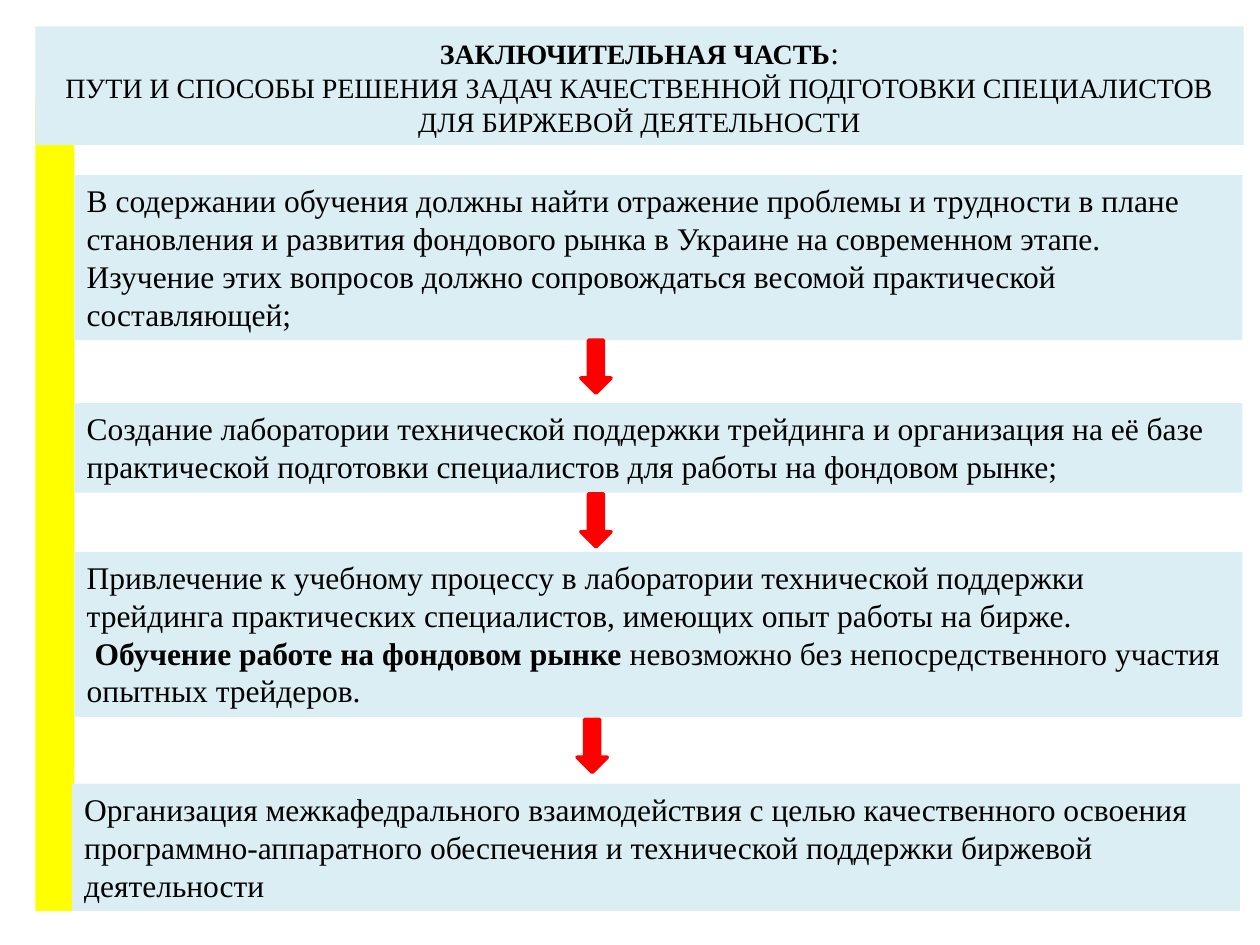
from dataclasses import dataclass

from pptx import Presentation, util as u
from pptx.dml.color import RGBColor
from pptx.enum import shapes, text

COLUMNS, ROWS = 100, 75


@dataclass(frozen=True)
class Theme:
    panel: str = "DBEEF4"
    bar: str = "FFFF00"
    arrow: str = "FF0000"
    ink: str = "000000"
    font: str = "Times New Roman"
    title_size: int = 16
    body_size: int = 18
    arrow_line: int = 2


@dataclass(frozen=True)
class Box:
    col: float
    row: float
    cols: float
    rows: float


@dataclass(frozen=True)
class Words:
    text: str
    bold: bool = False
    size: int = Theme.body_size
    new_line: bool = False


@dataclass(frozen=True)
class Step:
    row: float
    rows: float
    words: tuple[Words, ...]
    shift: float = 0
    arrow_row: float | None = None
    arrow_shift: float = 0


THEME = Theme()
PANEL_COL, PANEL_COLS = 5.9, 92.7
ARROW_COL, ARROW_COLS, ARROW_ROWS = 46.1, 2.4, 4.2
BAR = Box(2.8, 7.7, 3.1, 64.6)
HEADING = Box(2.8, 2.1, 95.9, 9.4)

TITLE = (
    (Words("ЗАКЛЮЧИТЕЛЬНАЯ ЧАСТЬ", True, THEME.title_size), Words(":")),
    (Words("ПУТИ И СПОСОБЫ РЕШЕНИЯ ЗАДАЧ КАЧЕСТВЕННОЙ ПОДГОТОВКИ "
           "СПЕЦИАЛИСТОВ ДЛЯ БИРЖЕВОЙ ДЕЯТЕЛЬНОСТИ", size=THEME.title_size),),
)

STEPS = (
    Step(13.9, 13.1, (
        Words("В содержании обучения должны найти отражение проблемы и трудности "
              "в плане становления и развития фондового рынка в Украине на "
              "современном этапе. Изучение этих вопросов должно сопровождаться "
              "весомой практической составляющей;"),), arrow_row=27),
    Step(32, 7.1, (
        Words("Создание лаборатории технической поддержки трейдинга и организация "
              "на её базе практической подготовки специалистов для работы на "
              "фондовом рынке;"),), arrow_row=39.2),
    Step(43.8, 13.1, (
        Words("Привлечение к учебному процессу в лаборатории технической поддержки "
              "трейдинга практических специалистов, имеющих опыт работы на бирже."),
        Words(" Обучение работе на фондовом рынке", True, new_line=True),
        Words(" невозможно без непосредственного участия опытных трейдеров.")),
        arrow_row=57.1, arrow_shift=-0.3),
    Step(62.2, 10.1, (
        Words("Организация межкафедрального взаимодействия с целью качественного "
              "освоения программно-аппаратного обеспечения и технической поддержки "
              "биржевой деятельности"),), shift=-0.2),
)


def place(prs, sp, box: Box) -> None:
    col, row = prs.slide_width / COLUMNS, prs.slide_height / ROWS
    frame = {"left": box.col * col, "top": box.row * row,
             "width": box.cols * col, "height": box.rows * row}
    for name, value in frame.items():
        setattr(sp, name, round(value))


def paint(sp, color: str) -> None:
    sp.fill.solid()
    sp.fill.fore_color.rgb = RGBColor.from_string(color)


def add_block(prs, s, kind, box: Box, color: str):
    sp = s.shapes.add_shape(kind, 0, 0, 0, 0)
    place(prs, sp, box)
    paint(sp, color)
    sp.shadow.inherit = False
    sp.line.fill.background()
    return sp


def write(sp, paragraphs: tuple[tuple[Words, ...], ...], align) -> None:
    tf = sp.text_frame
    frame = {"word_wrap": True, "vertical_anchor": text.MSO_ANCHOR.TOP,
             "auto_size": text.MSO_AUTO_SIZE.SHAPE_TO_FIT_TEXT}
    for name, value in frame.items():
        setattr(tf, name, value)
    for i, line in enumerate(paragraphs):
        p = tf.add_paragraph() if i else tf.paragraphs[0]
        p.alignment = align
        for words in line:
            if words.new_line:
                p.add_line_break()
            r = p.add_run()
            r.text = words.text
            style = {"name": THEME.font, "size": u.Pt(words.size), "bold": words.bold}
            for name, value in style.items():
                setattr(r.font, name, value)
            r.font.color.rgb = RGBColor.from_string(THEME.ink)


def add_step(prs, s, step: Step) -> None:
    box = Box(PANEL_COL + step.shift, step.row, PANEL_COLS, step.rows)
    sp = add_block(prs, s, shapes.MSO_SHAPE.RECTANGLE, box, THEME.panel)
    write(sp, (step.words,), text.PP_ALIGN.LEFT)


def add_arrow(prs, s, step: Step) -> None:
    box = Box(ARROW_COL + step.arrow_shift, step.arrow_row, ARROW_COLS, ARROW_ROWS)
    sp = add_block(prs, s, shapes.MSO_SHAPE.DOWN_ARROW, box, THEME.arrow)
    sp.line.color.rgb = RGBColor.from_string(THEME.arrow)
    sp.line.width = u.Pt(THEME.arrow_line)


def main() -> None:
    prs = Presentation()
    prs.slide_width, prs.slide_height = u.Inches(10), u.Inches(7.5)
    s = prs.slides.add_slide(prs.slide_layouts[5])

    title = s.shapes.title
    place(prs, title, HEADING)
    paint(title, THEME.panel)
    write(title, TITLE, text.PP_ALIGN.CENTER)

    bar = add_block(prs, s, shapes.MSO_SHAPE.RECTANGLE, BAR, THEME.bar)
    title.element.addprevious(bar.element)

    for step in STEPS:
        add_step(prs, s, step)
    for step in STEPS:
        if step.arrow_row is not None:
            add_arrow(prs, s, step)

    prs.save("out.pptx")


if __name__ == "__main__":
    main()
